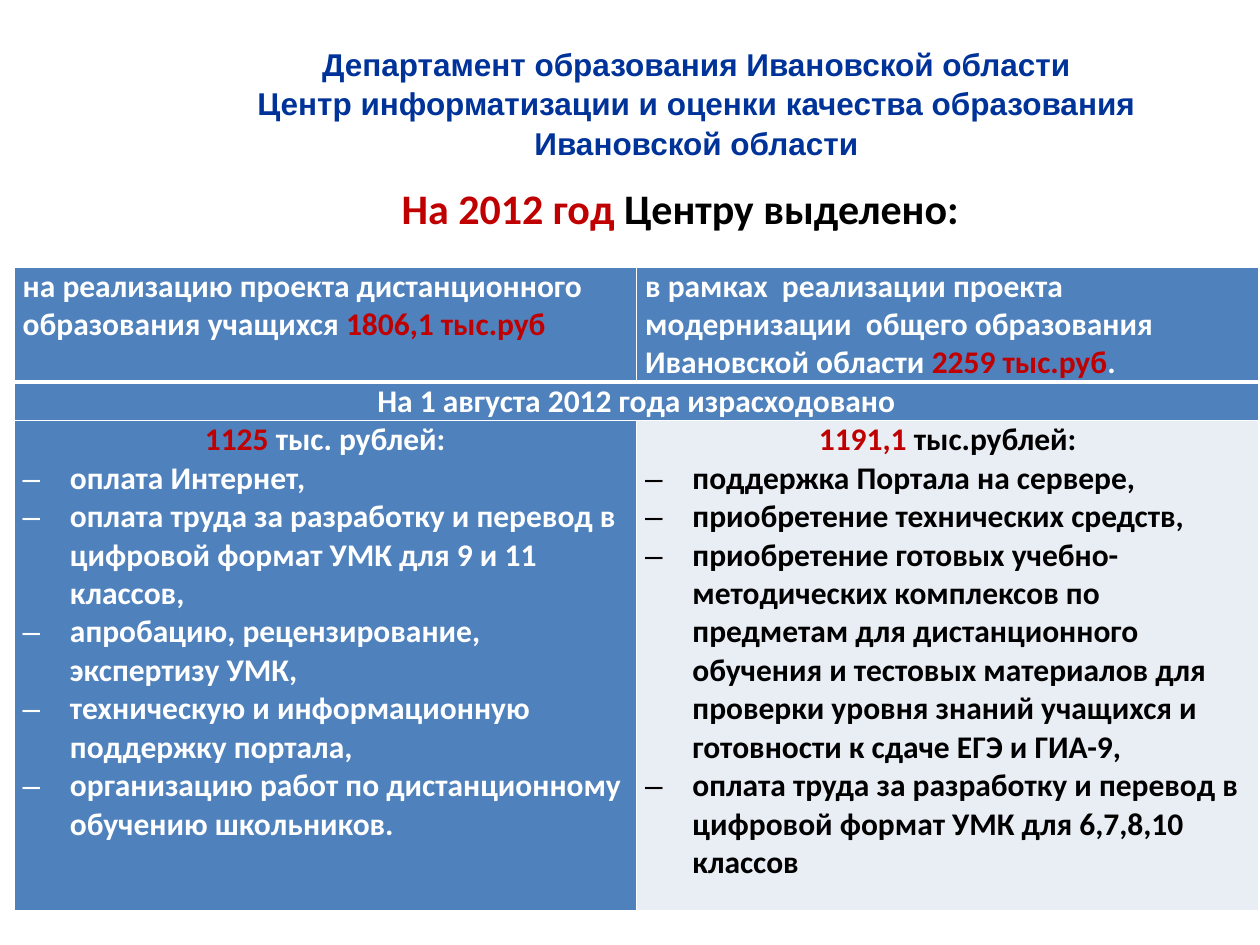
from lxml import etree
from pptx import Presentation
from pptx.dml.color import RGBColor as RGB
from pptx.enum.text import MSO_ANCHOR as ANCHOR, PP_ALIGN as ALIGN
from pptx.oxml.ns import qn
from pptx.util import Pt

COLORS = {"navy": "003399", "red": "C00000", "black": "000000",
          "white": "FFFFFF", "blue": "4F81BD", "pale": "E9EDF4"}
TITLE = {"size": Pt(18), "name": "Arial", "bold": True}
HEADING = {"size": Pt(24), "name": "Calibri", "bold": True}
BODY = {"size": Pt(18), "name": "Calibri", "bold": True}


class SlideBuilder:
    def __init__(self, slide, colors):
        self.s = slide
        self.colors = colors

    def rgb(self, name):
        return RGB.from_string(self.colors[name])

    def paragraph(self, tf, first, runs, fmt, align=None, indent=0, bullet=None):
        """Add one paragraph; runs are (text, colour) pairs."""
        p = tf.paragraphs[0] if first else tf.add_paragraph()
        pPr = p._p.get_or_add_pPr()
        if indent:
            pPr.set("marL", str(Pt(indent)))
            pPr.set("indent", str(-Pt(indent) if bullet else 0))
        if bullet:
            etree.SubElement(pPr, qn("a:buFont"), typeface="Arial")
            etree.SubElement(pPr, qn("a:buChar"), char=bullet)
        if align is not None:
            p.alignment = align
        for text, color in runs:
            r = p.add_run()
            r.text = text
            for key, value in fmt.items():
                setattr(r.font, key, value)
            r.font.color.rgb = self.rgb(color)
        return p

    def text(self, x, y, w, h, paragraphs, fmt, spacing=None, **layout):
        tf = self.s.shapes.add_textbox(Pt(x), Pt(y), Pt(w), Pt(h)).text_frame
        tf.word_wrap = True
        for i, runs in enumerate(paragraphs):
            p = self.paragraph(tf, i == 0, runs, fmt, **layout)
            if spacing:
                p.line_spacing = spacing

    def table(self, x, y, widths, heights):
        sp = self.s.shapes.add_table(len(heights), len(widths), Pt(x), Pt(y),
                                     Pt(sum(widths)), Pt(sum(heights)))
        for col, w in zip(sp.table.columns, widths):
            col.width = Pt(w)
        for row, h in zip(sp.table.rows, heights):
            row.height = Pt(h)
        return sp.table

    def cell(self, cell, fill, borders, anchor=ANCHOR.TOP):
        """Style a cell; borders maps an edge tag to its width."""
        tcPr = cell._tc.get_or_add_tcPr()
        for edge, width in borders.items():
            ln = etree.SubElement(tcPr, qn(f"a:{edge}"), w=str(Pt(width)))
            solid = etree.SubElement(ln, qn("a:solidFill"))
            etree.SubElement(solid, qn("a:srgbClr"), val=self.colors["white"])
        cell.fill.solid()
        cell.fill.fore_color.rgb = self.rgb(fill)
        cell.vertical_anchor = anchor
        cell.margin_left = cell.margin_right = Pt(5)
        cell.margin_top = cell.margin_bottom = 0

    def spending(self, cell, total, items, color):
        """Centred total followed by a dashed list."""
        tf = cell.text_frame
        amount, unit = total
        self.paragraph(tf, True, [(amount, "red"), (unit, color)], BODY, ALIGN.CENTER)
        for item in items:
            self.paragraph(tf, False, [(item, color)], BODY, indent=27, bullet="–")


def main():
    prs = Presentation()
    prs.slide_width, prs.slide_height = Pt(720), Pt(540)
    b = SlideBuilder(prs.slides.add_slide(prs.slide_layouts[6]), COLORS)

    # Organisation name and heading
    b.text(117.4, 20.9, 561, 98.6, [
        [("Департамент образования Ивановской области", "navy")],
        [("Центр информатизации и оценки качества образования "
          "Ивановской области", "navy")],
    ], TITLE, spacing=1.05, align=ALIGN.CENTER)
    b.text(150.5, 100.8, 448, 36, [
        [("На 2012 год ", "red"), ("Центру выделено:", "black")],
    ], HEADING, indent=72)

    # Table grid
    table = b.table(8, 152.6, [355.7] * 2, [65.8, 22, 280.2])
    fills = [["blue", "blue"], ["blue", "blue"], ["blue", "pale"]]
    for i, row in enumerate(fills):
        borders = {"lnL": 1, "lnR": 1, "lnT": 3 if i == 1 else 1,
                   "lnB": 3 if i == 0 else 1}
        for j, fill in enumerate(row):
            b.cell(table.cell(i, j), fill, borders,
                   ANCHOR.MIDDLE if i == 1 else ANCHOR.TOP)
    table.cell(1, 0).merge(table.cell(1, 1))

    # Allocated sums
    allocated = [
        [("на реализацию проекта дистанционного образования учащихся ", "white"),
         ("1806,1 тыс.руб", "red")],
        [("в рамках  реализации проекта модернизации  общего образования "
          "Ивановской области ", "white"), ("2259 тыс.руб", "red"), (".", "white")],
    ]
    for j, runs in enumerate(allocated):
        b.paragraph(table.cell(0, j).text_frame, True, runs, BODY)

    # Spent sums
    b.paragraph(table.cell(1, 0).text_frame, True,
                [("На 1 августа 2012 года израсходовано", "white")], BODY, ALIGN.CENTER)
    b.spending(table.cell(2, 0), ("1125 ", "тыс. рублей:"), [
        "оплата Интернет,",
        "оплата труда за разработку и перевод в цифровой формат УМК для 9 и 11 классов,",
        "апробацию, рецензирование, экспертизу УМК,",
        "техническую и информационную поддержку портала,",
        "организацию работ по дистанционному обучению школьников.",
    ], "white")
    b.spending(table.cell(2, 1), ("1191,1 ", "тыс.рублей:"), [
        "поддержка Портала на сервере,",
        "приобретение технических средств,",
        "приобретение готовых учебно-методических комплексов по предметам для "
        "дистанционного обучения и тестовых материалов для проверки уровня знаний "
        "учащихся и готовности к сдаче ЕГЭ и ГИА-9,",
        "оплата труда за разработку и перевод в цифровой формат УМК для 6,7,8,10 классов",
    ], "black")

    prs.save("out.pptx")


if __name__ == "__main__":
    main()
